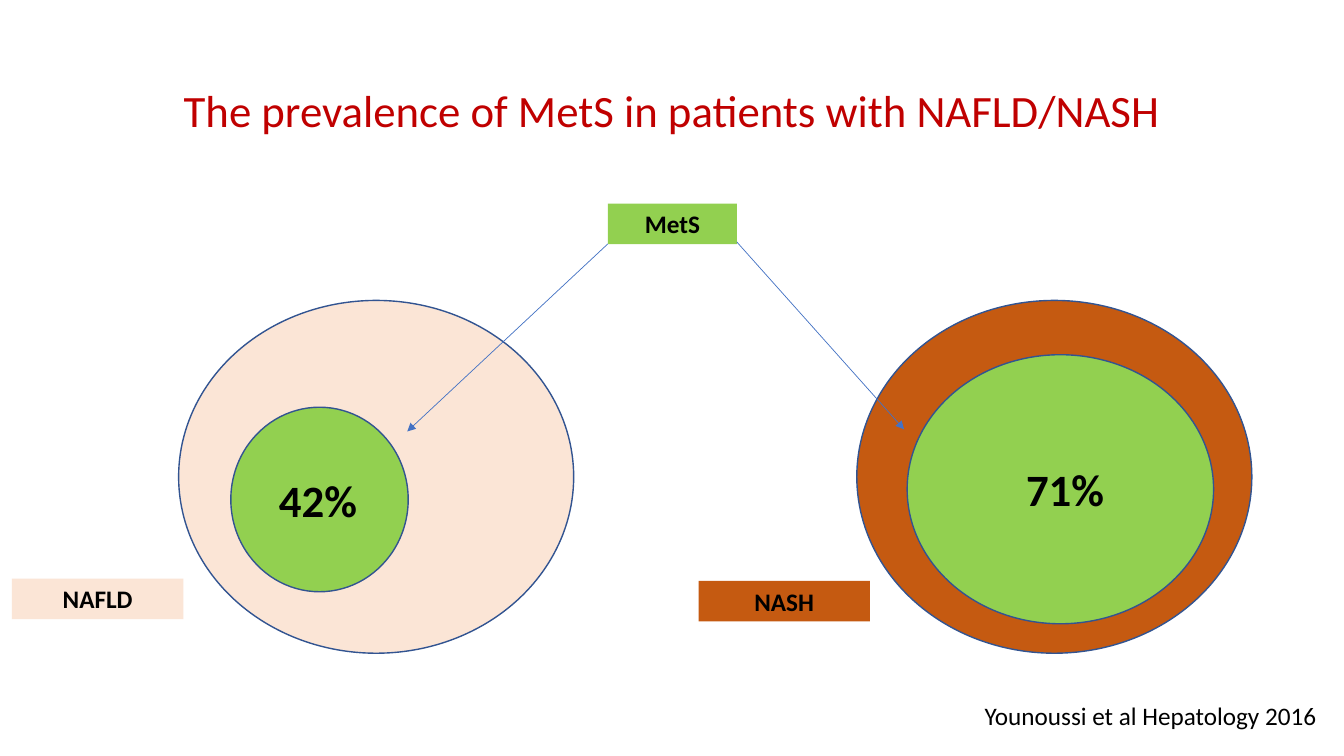
from lxml.etree import SubElement
from pptx import Presentation
from pptx.dml.color import RGBColor
from pptx.enum.shapes import MSO_CONNECTOR as Connector, MSO_SHAPE as Shape
from pptx.enum.text import MSO_ANCHOR as Anchor, PP_ALIGN as Align
from pptx.oxml.ns import qn
from pptx.util import Pt

COLORS = {
    "title": "C00000",
    "text": "000000",
    "mets": "92D050",
    "nafld": "FBE5D6",
    "nash": "C55A11",
    "outline": "325491",
    "arrow": "4472C4",
}


def color(name):
    return RGBColor.from_string(COLORS[name])


class SlideBuilder:
    font_name = "Calibri"

    def __init__(self, slide):
        self.slide = slide

    def set_text(self, shape, text, size, bold=False, ink="text", align=Align.LEFT,
                 anchor=Anchor.TOP):
        frame = shape.text_frame
        frame.word_wrap = True
        frame.vertical_anchor = anchor
        paragraph = frame.paragraphs[0]
        paragraph.alignment = align
        run = paragraph.add_run()
        run.text = text
        formats = {"name": self.font_name, "size": Pt(size), "bold": bold}
        for attribute, value in formats.items():
            setattr(run.font, attribute, value)
        run.font.color.rgb = color(ink)
        return paragraph

    def title(self, text, box):
        shape = self.slide.shapes.title
        for attribute, value in zip(("left", "top", "width", "height"), box):
            setattr(shape, attribute, Pt(value))
        paragraph = self.set_text(shape, text, 32, ink="title", align=Align.CENTER,
                                  anchor=Anchor.MIDDLE)
        paragraph.line_spacing = 0.9

    def filled(self, kind, box, fill):
        shape = self.slide.shapes.add_shape(kind, *map(Pt, box))
        shape.shadow.inherit = False
        shape.fill.solid()
        shape.fill.fore_color.rgb = color(fill)
        return shape

    def ellipse(self, box, fill):
        shape = self.filled(Shape.OVAL, box, fill)
        shape.line.color.rgb = color("outline")
        shape.line.width = Pt(1)

    def label(self, text, box, fill):
        shape = self.filled(Shape.RECTANGLE, box, fill)
        shape.line.fill.background()
        self.set_text(shape, text, 18, bold=True, align=Align.CENTER)

    def text(self, text, box, size, bold=False):
        shape = self.slide.shapes.add_textbox(*map(Pt, box))
        self.set_text(shape, text, size, bold)

    def arrow(self, start, end):
        connector = self.slide.shapes.add_connector(
            Connector.STRAIGHT, *map(Pt, start + end))
        connector.line.color.rgb = color("arrow")
        connector.line.width = Pt(0.5)
        properties = connector._element.spPr
        SubElement(properties.find(qn("a:ln")), qn("a:tailEnd"), type="triangle")
        SubElement(properties, qn("a:effectLst"))


def main():
    presentation = Presentation()
    presentation.slide_width, presentation.slide_height = Pt(960), Pt(540)
    slide = presentation.slides.add_slide(presentation.slide_layouts[5])
    builder = SlideBuilder(slide)

    # Title and shared MetS label
    builder.title("The prevalence of MetS in patients with NAFLD/NASH",
                  (66, 28.8, 828, 104.4))
    builder.label("MetS", (434.2, 145.4, 92.2, 29), "mets")

    # Patient groups: outer ellipse left, label corner, arrow, MetS share
    groups = [
        ("NAFLD", "nafld", 127.6, (8.6, 413.3), (434.2, 174.2), (290.9, 308.2),
         (164.9, 290.9, 126.7, 131.8), "42%", (192.2, 334.1)),
        ("NASH", "nash", 612, (499, 414.9), (526.3, 172.8), (645.8, 306.7),
         (648, 253.4, 218.9, 192.2), "71%", (725.8, 326.2)),
    ]
    for name, fill, left, corner, start, end, share, percent, percent_corner in groups:
        builder.ellipse((left, 214.6, 282.2, 252), fill)
        builder.label(name, corner + (122.4, 29), fill)
        builder.arrow(start, end)
        builder.ellipse(share, "mets")
        builder.text(percent, percent_corner + (82.8, 46), 32, bold=True)

    # Citation
    builder.text("Younoussi et al Hepatology 2016", (696.2, 496.8, 293.8, 29), 18)

    presentation.save("out.pptx")


if __name__ == "__main__":
    main()
